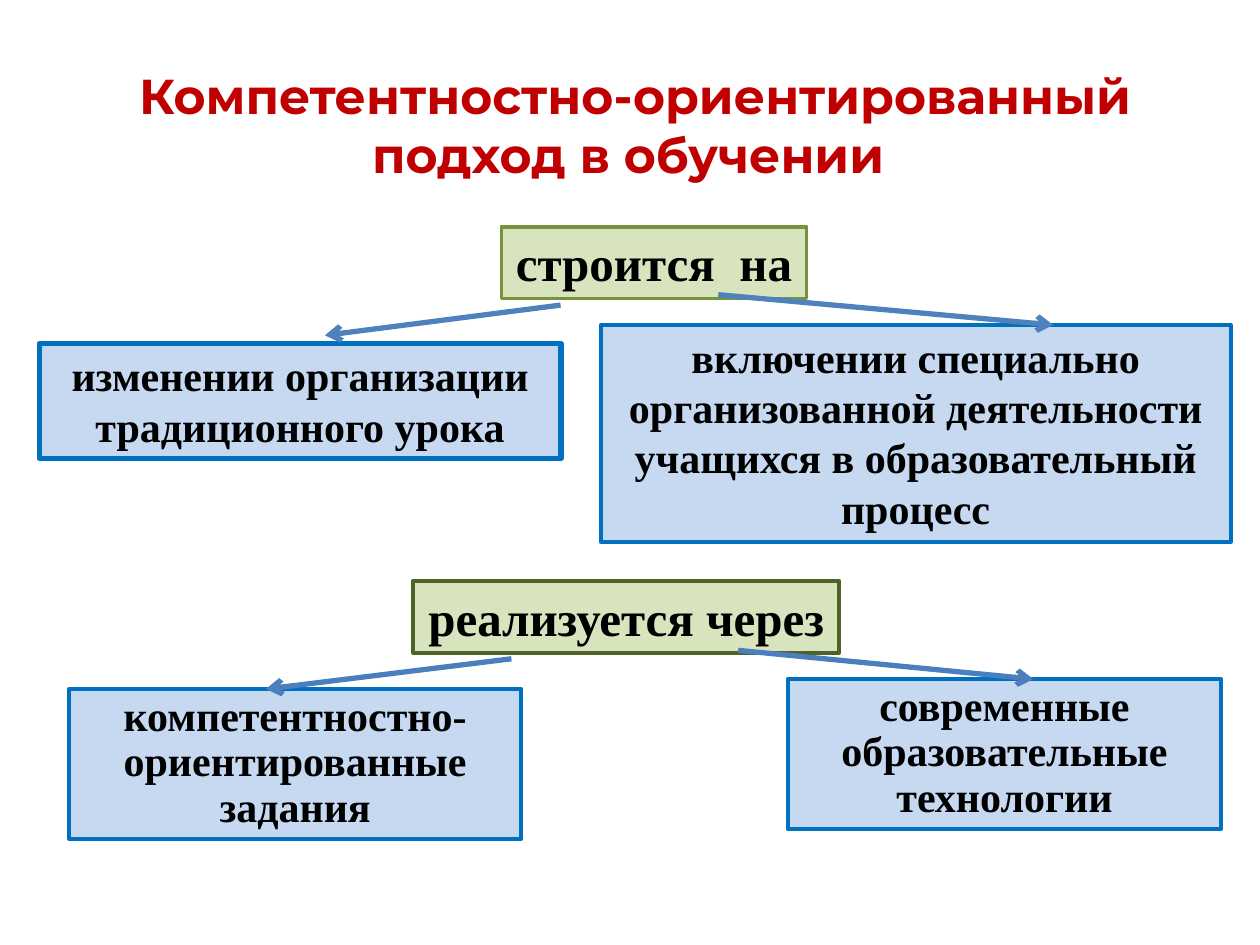
"""Build a slide on the competence-oriented approach to teaching."""
from dataclasses import dataclass

from lxml import etree
from pptx import Presentation, util as u
from pptx.dml.color import RGBColor as Rgb
from pptx.enum import shapes as kinds, text as txt
from pptx.oxml.ns import qn


@dataclass(frozen=True)
class Theme:
    """Colours, fonts and sizes of the slide."""
    red: str = "C00000"
    ink: str = "000000"
    green: str = "D7E4BD"
    olive: str = "77933C"
    moss: str = "4F6228"
    sky: str = "C6D9F1"
    blue: str = "0070C0"
    steel: str = "4F81BD"
    slate: str = "4B7EBC"
    head: str = "Montserrat"
    body: str = "Times New Roman"
    big: int = 28
    small: int = 24


T = Theme()


@dataclass(frozen=True)
class Box:
    """A framed label, measured in centimetres."""
    words: str
    x: float
    y: float
    w: float
    h: float
    fill: str = T.sky
    edge: str = T.blue
    size: int = T.small
    line: float = 2.25
    lead: float = 1.0
    wrap: bool = True


@dataclass(frozen=True)
class Arrow:
    """An arrow between two points, measured in centimetres."""
    x1: float
    y1: float
    x2: float
    y2: float
    color: str


BOXES = [
    Box("строится  на", 10.11, 4.57, 6.15, 1.45, T.green, T.olive, T.big, wrap=False),
    Box("изменении организации традиционного урока", 0.79, 6.93, 10.52, 2.31, line=3),
    Box("включении специально организованной деятельности учащихся "
        "в образовательный процесс", 12.11, 6.55, 12.7, 4.37),
    Box("реализуется через", 8.33, 11.71, 8.59, 1.45, T.green, T.moss, T.big, wrap=False),
    Box("компетентностно- ориентированные задания", 1.39, 13.89, 9.12, 3.02, lead=0.9),
    Box("современные образовательные технологии", 15.88, 13.69, 8.74, 3.02, lead=0.9),
]

ARROWS = [
    Arrow(11.3, 6.15, 6.55, 6.76, T.steel),
    Arrow(14.48, 5.94, 21.23, 6.55, T.steel),
    Arrow(10.31, 13.28, 5.36, 13.89, T.slate),
    Arrow(14.88, 13.11, 20.83, 13.69, T.slate),
]


def write(shape, words: str, face: str, size: int, color: str,
          lead: float = 1.0, wrap: bool = True) -> None:
    """Set centred bold text at the top of a shape."""
    frame = shape.text_frame
    frame.text = words
    frame.word_wrap = wrap
    frame.auto_size = txt.MSO_AUTO_SIZE.NONE
    frame.vertical_anchor = txt.MSO_ANCHOR.TOP
    para = frame.paragraphs[0]
    para.alignment = txt.PP_ALIGN.CENTER
    para.line_spacing = lead
    font = para.font
    font.name, font.size, font.bold = face, u.Pt(size), True
    font.color.rgb = Rgb.from_string(color)


def draw_box(slide, box: Box) -> None:
    """Draw one framed label."""
    shape = slide.shapes.add_shape(
        kinds.MSO_SHAPE.RECTANGLE, *map(u.Cm, (box.x, box.y, box.w, box.h)))
    shape.shadow.inherit = False
    shape.fill.solid()
    shape.fill.fore_color.rgb = Rgb.from_string(box.fill)
    shape.line.color.rgb = Rgb.from_string(box.edge)
    shape.line.width = u.Pt(box.line)
    write(shape, box.words, T.body, box.size, T.ink, box.lead, box.wrap)


def draw_arrow(slide, arrow: Arrow) -> None:
    """Draw one line with an open arrowhead at its end."""
    link = slide.shapes.add_connector(
        kinds.MSO_CONNECTOR.STRAIGHT,
        *map(u.Cm, (arrow.x1, arrow.y1, arrow.x2, arrow.y2)))
    link.line.color.rgb = Rgb.from_string(arrow.color)
    link.line.width = u.Pt(3)
    etree.SubElement(link.line._get_or_add_ln(), qn("a:tailEnd"), type="arrow")
    etree.SubElement(link._element.spPr, qn("a:effectLst"))


def main() -> None:
    """Build and save the slide."""
    deck = Presentation()
    deck.slide_width, deck.slide_height = u.Cm(25.4), u.Cm(19.05)
    slide = deck.slides.add_slide(deck.slide_layouts[5])
    title = slide.shapes.title
    title.left, title.top, title.width, title.height = map(u.Cm, (0.99, 1.19, 23.62, 2.64))
    write(title, "Компетентностно-ориентированный подход в обучении ",
          T.head, T.big, T.red)
    for box in BOXES:
        draw_box(slide, box)
    for arrow in ARROWS:
        draw_arrow(slide, arrow)
    deck.save("out.pptx")


if __name__ == "__main__":
    main()
